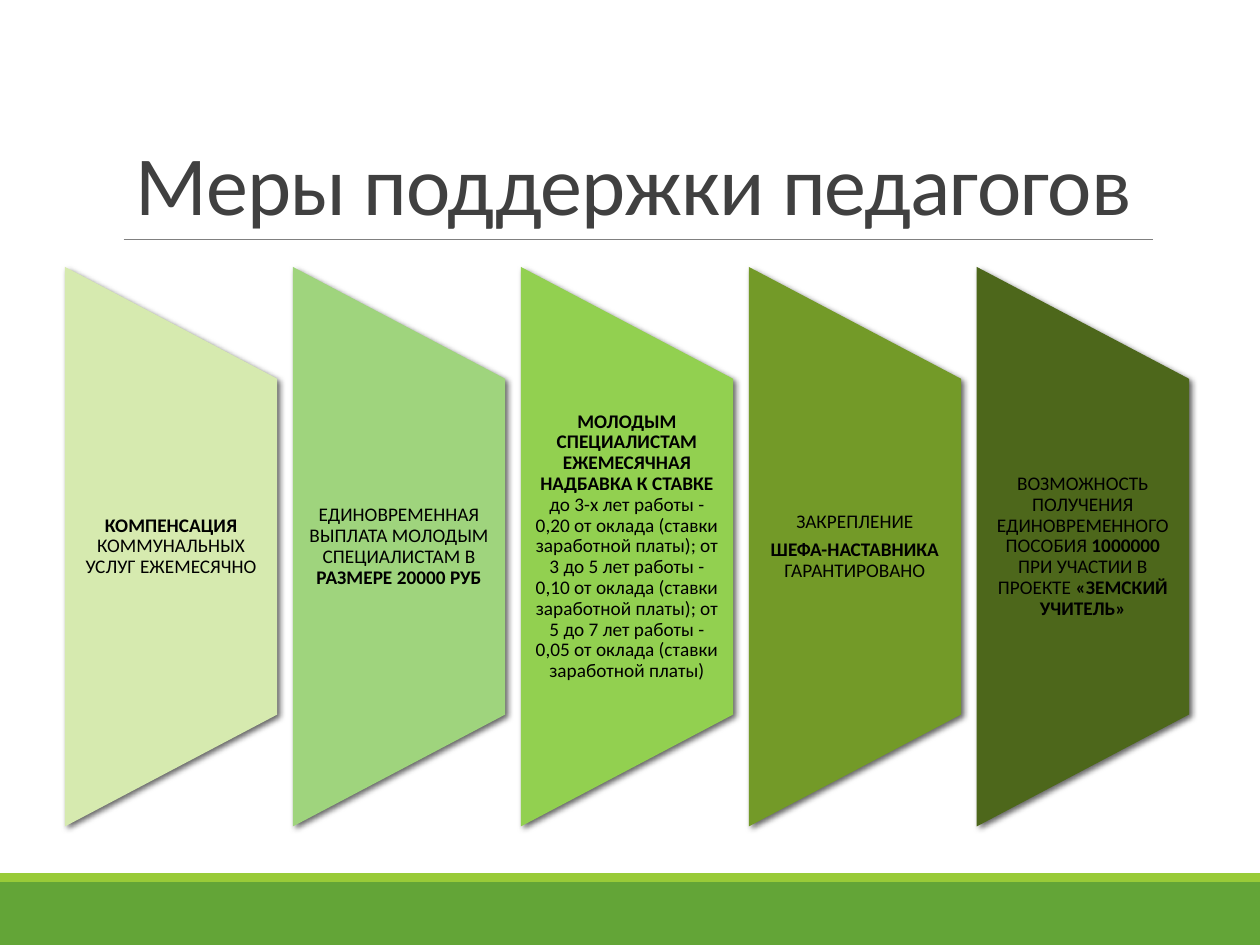
import lxml.etree
import pptx
import pptx.dml.color
import pptx.enum.shapes
import pptx.enum.text
import pptx.oxml
import pptx.oxml.ns
import pptx.util
from pptx.util import Cm, Pt

FONT = "Calibri"
SHAPES = pptx.enum.shapes.MSO_SHAPE
ANCHORS = pptx.enum.text.MSO_ANCHOR
CENTER = pptx.enum.text.PP_ALIGN.CENTER
SHADOW = (
    f'<a:outerShdw {pptx.oxml.ns.nsdecls("a")} blurRad="{Pt(3.5)}" dist="{Pt(2)}" '
    'dir="2700000" algn="tl" rotWithShape="0">'
    '<a:srgbClr val="000000"><a:alpha val="60000"/></a:srgbClr></a:outerShdw>'
)


def color(value):
    return pptx.dml.color.RGBColor.from_string(value)


def add_filled_shape(kind, left, top, width, height, fill):
    shape = slide.shapes.add_shape(kind, Cm(left), Cm(top), Cm(width), Cm(height))
    shape.shadow.inherit = False
    shape.fill.solid()
    shape.fill.fore_color.rgb = color(fill)
    shape.line.fill.background()
    return shape


presentation = pptx.Presentation()
presentation.slide_width = Cm(25.4)
presentation.slide_height = Cm(19.05)
slide = presentation.slides.add_slide(presentation.slide_layouts[5])

# Footer bands and the rule under the title
add_filled_shape(SHAPES.RECTANGLE, 0, 17.78, 25.4, 1.27, "63A537")
add_filled_shape(SHAPES.RECTANGLE, 0, 17.6, 25.4, 0.18, "99CB38")
rule = slide.shapes.add_connector(
    pptx.enum.shapes.MSO_CONNECTOR.STRAIGHT, Cm(2.49), Cm(4.83), Cm(23.24), Cm(4.83))
rule.line.color.rgb = color("808080")
rule.line.width = Pt(0.5)
lxml.etree.SubElement(rule._element.spPr, pptx.oxml.ns.qn("a:effectLst"))

title = slide.shapes.title
title.left, title.top, title.width, title.height = Cm(2.29), Cm(0.79), Cm(20.96), Cm(4.03)
title.text_frame.vertical_anchor = ANCHORS.BOTTOM
title.text_frame.word_wrap = True
paragraph = title.text_frame.paragraphs[0]
run = paragraph.add_run()
run.text = "Меры поддержки педагогов"
run.font._element.set("spc", "-50")
paragraph.alignment = CENTER
paragraph.line_spacing = 0.85
paragraph.font.name = FONT
paragraph.font.size = Pt(48)
paragraph.font.color.rgb = color("404040")

# Each panel: fill, then paragraphs made of (text, bold) runs
panels = [
    ("D6EAAF", [[("КОМПЕНСАЦИЯ", True), (" КОММУНАЛЬНЫХ УСЛУГ ЕЖЕМЕСЯЧНО", False)]]),
    ("9FD47D", [[("ЕДИНОВРЕМЕННАЯ ВЫПЛАТА МОЛОДЫМ СПЕЦИАЛИСТАМ В ", False),
                 ("РАЗМЕРЕ 20000 РУБ", True)]]),
    ("92D050", [[("МОЛОДЫМ СПЕЦИАЛИСТАМ ЕЖЕМЕСЯЧНАЯ НАДБАВКА К СТАВКЕ ", True),
                 ("до 3-х лет работы - 0,20 от оклада (ставки заработной платы); "
                  "от 3 до 5 лет работы - 0,10 от оклада (ставки заработной платы); "
                  "от 5 до 7 лет работы - 0,05 от оклада (ставки заработной платы)", False)]]),
    ("739A28", [[("ЗАКРЕПЛЕНИЕ", False)],
                [("ШЕФА-НАСТАВНИКА", True), (" ГАРАНТИРОВАНО", False)]]),
    ("4D671B", [[("ВОЗМОЖНОСТЬ ПОЛУЧЕНИЯ ЕДИНОВРЕМЕННОГО ПОСОБИЯ ", False),
                 ("1000000", True), (" ПРИ УЧАСТИИ В ПРОЕКТЕ ", False),
                 ("«ЗЕМСКИЙ УЧИТЕЛЬ»", True)]]),
]
first_left, pitch, middle = 1.31, 4.595, 11.02
panel_width, panel_height, text_height = 4.28, 11.28, 6.78

for index, (fill, paragraphs) in enumerate(panels):
    left = first_left + index * pitch
    # The shape lies on its side, so its width is the panel height
    panel = add_filled_shape(
        SHAPES.FLOWCHART_MANUAL_OPERATION,
        left + (panel_width - panel_height) / 2, middle - panel_width / 2,
        panel_height, panel_width, fill)
    panel.rotation = 270
    effects = panel._element.spPr.find(pptx.oxml.ns.qn("a:effectLst"))
    effects.append(pptx.oxml.parse_xml(SHADOW))

    box = slide.shapes.add_textbox(
        Cm(left), Cm(middle - text_height / 2), Cm(panel_width), Cm(text_height))
    frame = box.text_frame
    frame.word_wrap = True
    frame.vertical_anchor = ANCHORS.MIDDLE
    frame.margin_left = frame.margin_right = Cm(0.2)
    frame.margin_top = frame.margin_bottom = 0
    for number, runs in enumerate(paragraphs):
        paragraph = frame.add_paragraph() if number else frame.paragraphs[0]
        paragraph.alignment = CENTER
        paragraph.line_spacing = 0.9
        paragraph.space_after = Pt(3.85)
        paragraph.font.name = FONT
        paragraph.font.size = Pt(11)
        paragraph.font.color.rgb = color("000000")
        for text, bold in runs:
            run = paragraph.add_run()
            run.text = text
            run.font.bold = bold

presentation.save("out.pptx")
